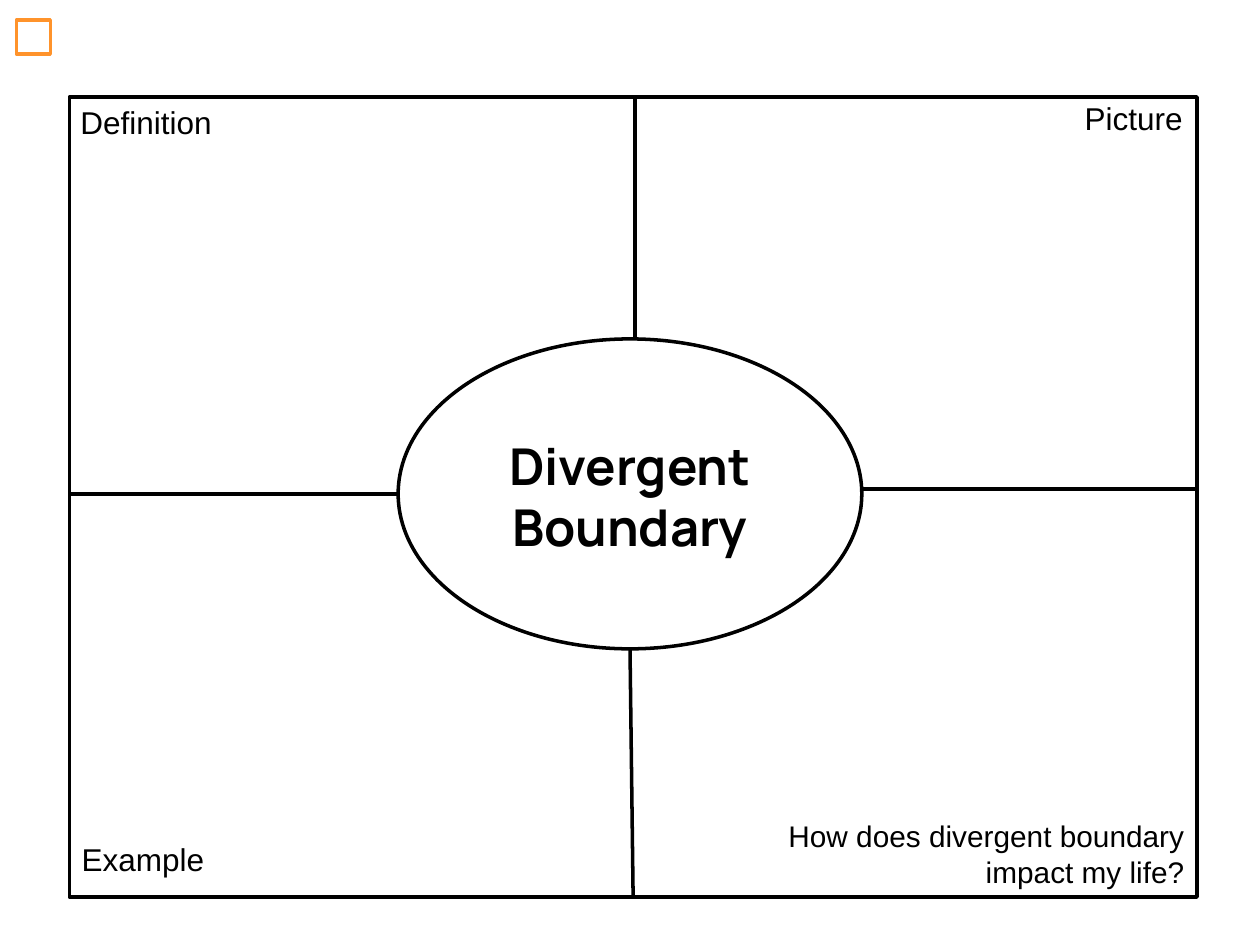
from pptx import Presentation
from pptx.dml.color import RGBColor
from pptx.enum.shapes import MSO_CONNECTOR, MSO_SHAPE
from pptx.enum.text import MSO_AUTO_SIZE, PP_ALIGN
from pptx.oxml.ns import qn
from pptx.util import Inches, Pt

RECTANGLE, OVAL = MSO_SHAPE.RECTANGLE, MSO_SHAPE.OVAL
STRAIGHT = MSO_CONNECTOR.STRAIGHT
LEFT, CENTER, RIGHT = PP_ALIGN.LEFT, PP_ALIGN.CENTER, PP_ALIGN.RIGHT
FIT_SHAPE = MSO_AUTO_SIZE.SHAPE_TO_FIT_TEXT
BLACK = RGBColor(0x00, 0x00, 0x00)
WHITE = RGBColor(0xFF, 0xFF, 0xFF)
ORANGE = RGBColor(0xFF, 0x93, 0x2B)
WIDTH, HEIGHT = Inches(10), Inches(7.5)
COLUMNS, ROWS = 100, 75
BOTTOM_SIDE = 2


def write_text(frame, text, size=18, font="Arial", bold=False, align=LEFT):
    frame.text = text
    for paragraph in frame.paragraphs:
        paragraph.alignment = align
        paragraph.font.size = Pt(size)
        paragraph.font.name = font
        paragraph.font.bold = bold
        paragraph.font.color.rgb = BLACK


class FrayerSlide:
    """Draws Frayer model parts on a slide divided into columns and rows."""

    def __init__(self, slide, line_width=2):
        self.shapes = slide.shapes
        self.line_width = Pt(line_width)

    def grid(self, *lengths):
        units = (WIDTH / COLUMNS, HEIGHT / ROWS)
        return [round(length * units[index % 2]) for index, length in enumerate(lengths)]

    def outline(self, kind, box, color=BLACK, fill=None):
        shape = self.shapes.add_shape(kind, *self.grid(*box))
        shape.shadow.inherit = False
        shape.line.color.rgb = color
        shape.line.width = self.line_width
        if fill is None:
            shape.fill.background()
        else:
            shape.fill.solid()
            shape.fill.fore_color.rgb = fill
        return shape

    def divider(self, start, end):
        connector = self.shapes.add_connector(STRAIGHT, *self.grid(*start, *end))
        connector.line.color.rgb = BLACK
        connector.line.width = self.line_width
        properties = connector._element.spPr
        properties.append(properties.makeelement(qn("a:effectLst"), {}))
        return connector

    def label(self, box, text, **style):
        frame = self.shapes.add_textbox(*self.grid(*box)).text_frame
        frame.word_wrap = True
        frame.auto_size = FIT_SHAPE
        write_text(frame, text, **style)


def main():
    presentation = Presentation()
    presentation.slide_width, presentation.slide_height = WIDTH, HEIGHT
    page = FrayerSlide(presentation.slides.add_slide(presentation.slide_layouts[6]))

    frame = page.outline(RECTANGLE, (5.5, 7.7, 89.5, 63.5))
    page.divider((50.4, 7.7), (50.4, 26.9))
    page.divider((50, 51.5), (50.2, 71.1)).end_connect(frame, BOTTOM_SIDE)
    page.divider((5.5, 39.2), (31.6, 39.2))
    page.divider((68.4, 38.8), (95, 38.8))
    page.outline(OVAL, (31.6, 26.9, 36.8, 24.6), fill=WHITE)

    page.label((32.7, 34, 34.6, 10.8), "Divergent Boundary",
               size=29, font="Manrope", bold=True, align=CENTER)
    page.label((5.4, 7.7, 12.5, 4), "Definition")
    page.label((5.5, 66.2, 11.8, 4), "Example")
    page.label((85.1, 7.4, 9.9, 4), "Picture")
    page.label((45.7, 64.4, 49.3, 6.7), "How does divergent boundary\nimpact my life?",
               size=17, align=RIGHT)
    page.outline(RECTANGLE, (1.3, 1.6, 2.7, 2.7), color=ORANGE)
    presentation.save("out.pptx")


if __name__ == "__main__":
    main()
